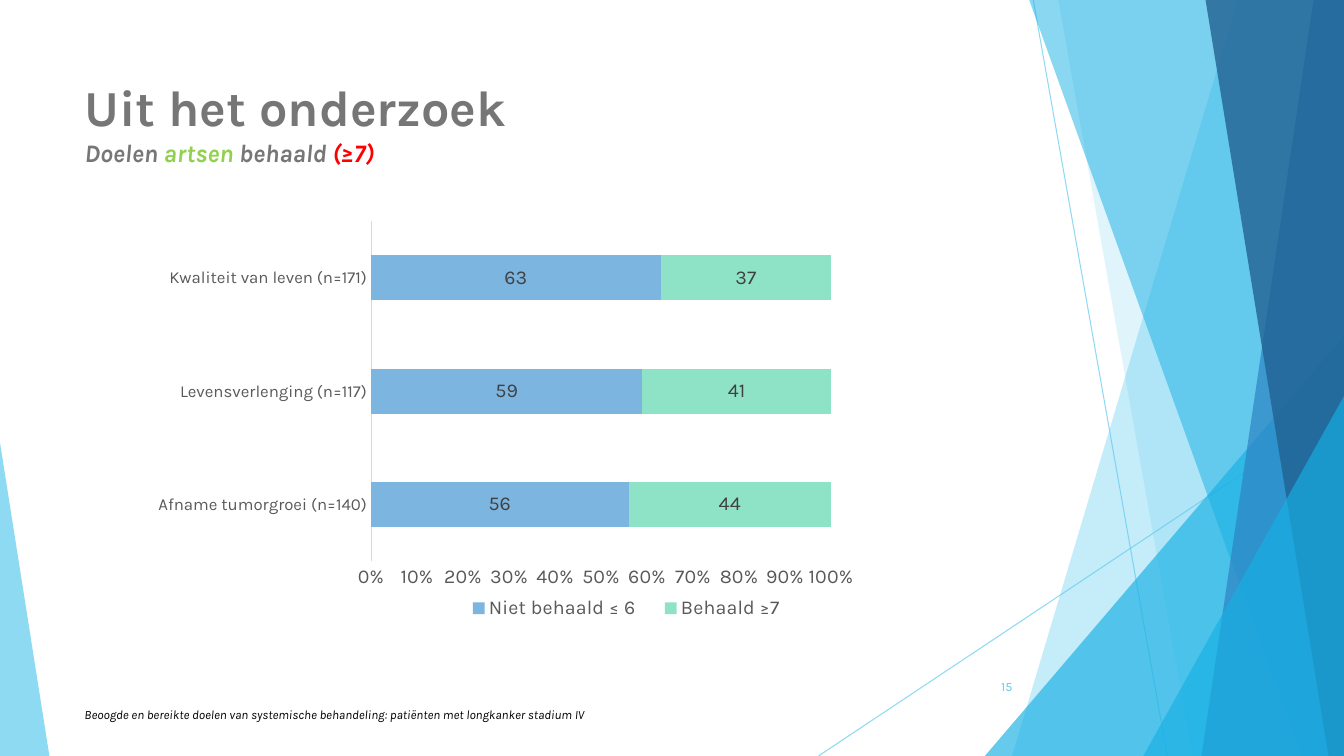
"""Build the slide on treatment goals reached by physicians."""
import lxml.etree
import pptx
import pptx.chart.data
import pptx.dml.color
import pptx.enum.chart
import pptx.enum.shapes
import pptx.enum.text
import pptx.oxml
import pptx.oxml.ns
import pptx.util

WIDTH, HEIGHT = pptx.util.Inches(13.333), pptx.util.Inches(7.5)
FONT = "Karla"
COLORS = {
    "sky": "5FCBEF", "cyan": "17B0E4", "blue": "2E83C3", "navy": "226292",
    "title": "767676", "lime": "92D050", "red": "FF0000", "black": "000000",
    "missed": "7CB5E0", "reached": "8EE3C7", "axis": "595959",
    "rule": "D9D9D9", "value": "404040",
}
TRIANGLE = pptx.enum.shapes.MSO_SHAPE.ISOSCELES_TRIANGLE
TOP = pptx.enum.text.MSO_ANCHOR.TOP
MIDDLE = pptx.enum.text.MSO_ANCHOR.MIDDLE
LEFT = pptx.enum.text.PP_ALIGN.LEFT
RIGHT = pptx.enum.text.PP_ALIGN.RIGHT


def across(percent):
    return round(WIDTH * percent / 100)


def down(percent):
    return round(HEIGHT * percent / 100)


def area(left, top, width, height):
    return across(left), down(top), across(width), down(height)


def rgb(name):
    return pptx.dml.color.RGBColor.from_string(COLORS[name])


def paint(fill_or_line, color, opacity):
    fill_or_line.solid()
    fill_or_line.fore_color.rgb = rgb(color)
    tint = fill_or_line.fore_color._xFill[0]
    alpha = lxml.etree.SubElement(tint, pptx.oxml.ns.qn("a:alpha"))
    alpha.set("val", str(opacity * 1000))


def finish_facet(facet, color, opacity):
    facet.shadow.inherit = False
    facet.line.fill.background()
    paint(facet.fill, color, opacity)


def add_ribbon(slide, top_left, bottom_left, color, opacity):
    builder = slide.shapes.build_freeform(across(top_left), 0)
    corners = [(100, 0), (100, 100), (bottom_left, 100)]
    builder.add_line_segments([(across(x), down(y)) for x, y in corners], close=True)
    finish_facet(builder.convert_to_shape(), color, opacity)


def add_wedge(slide, left, top, width, apex, color, opacity):
    wedge = slide.shapes.add_shape(TRIANGLE, *area(left, top, width, 100 - top))
    wedge.adjustments[0] = apex
    finish_facet(wedge, color, opacity)


def add_ray(slide, start_x, start_y, end_x):
    ray = slide.shapes.add_connector(
        pptx.enum.shapes.MSO_CONNECTOR.STRAIGHT,
        across(start_x), down(start_y), across(end_x), HEIGHT)
    ray.line.width = pptx.util.Pt(0.75)
    paint(ray.line.fill, "sky", 70)
    lxml.etree.SubElement(ray._element.spPr, pptx.oxml.ns.qn("a:effectLst"))


def style_font(font, size, color, bold=False, italic=False):
    font.name, font.size = FONT, pptx.util.Pt(size)
    font.color.rgb = rgb(color)
    font.bold, font.italic = bold, italic


def add_text(slide, box, lines, anchor=MIDDLE, align=LEFT):
    frame = slide.shapes.add_textbox(*box).text_frame
    frame.word_wrap = True
    frame.vertical_anchor = anchor
    if anchor == TOP:
        frame.margin_top = down(1.2)
    paragraph = frame.paragraphs[0]
    paragraph.alignment = align
    for number, line in enumerate(lines):
        if number:
            paragraph.add_line_break()
        for words, *look in line:
            run = paragraph.add_run()
            run.text = words
            style_font(run.font, *look)


def place(parent, x, y, w, h, inner=False):
    """Fix the position of a chart part as shares of the chart."""
    parts = [("layoutTarget", "inner")] if inner else []
    parts += [("xMode", "edge"), ("yMode", "edge"), ("x", x), ("y", y), ("w", w), ("h", h)]
    body = "".join(f'<c:{tag} val="{value}"/>' for tag, value in parts)
    layout = pptx.oxml.parse_xml(
        f'<c:layout {pptx.oxml.ns.nsdecls("c")}><c:manualLayout>{body}'
        "</c:manualLayout></c:layout>")
    for old in parent.findall(pptx.oxml.ns.qn("c:layout")):
        parent.remove(old)
    position = parent.find(pptx.oxml.ns.qn("c:legendPos"))
    if position is None:
        parent.insert(0, layout)
    else:
        position.addnext(layout)


def style_axis(axis, size):
    axis.has_major_gridlines = False
    axis.major_tick_mark = pptx.enum.chart.XL_TICK_MARK.NONE
    axis.minor_tick_mark = pptx.enum.chart.XL_TICK_MARK.NONE
    style_font(axis.tick_labels.font, size, "axis")


def add_goal_chart(slide, box, goals, results):
    data = pptx.chart.data.CategoryChartData()
    data.categories = goals
    for name, values, _ in results:
        data.add_series(name, values)
    chart = slide.shapes.add_chart(
        pptx.enum.chart.XL_CHART_TYPE.BAR_STACKED_100, *box, data).chart
    style_font(chart.font, 10, "black")
    chart.has_title = False

    style_axis(chart.category_axis, 12)
    rule = chart.category_axis.format.line
    rule.color.rgb, rule.width = rgb("rule"), pptx.util.Pt(0.75)
    percentages = chart.value_axis
    style_axis(percentages, 14)
    percentages.format.line.fill.background()
    percentages.minimum_scale, percentages.major_unit = 0, 0.1
    percentages.tick_labels.number_format = "0%"
    percentages.tick_labels.number_format_is_linked = False

    bars = chart.plots[0]
    bars.gap_width, bars.overlap, bars.vary_by_categories = 150, 100, False
    for series, (_, _, color) in zip(bars.series, results):
        series.format.fill.solid()
        series.format.fill.fore_color.rgb = rgb(color)
        labels = series.data_labels
        labels.show_value = True
        labels.position = pptx.enum.chart.XL_LABEL_POSITION.CENTER
        style_font(labels.font, 14, "value")

    chart.has_legend = True
    chart.legend.position = pptx.enum.chart.XL_LEGEND_POSITION.BOTTOM
    chart.legend.include_in_layout = False
    style_font(chart.legend.font, 14, "axis")
    place(chart.legend._element, 0.43, 0.89, 0.49, 0.08)
    place(chart._chartSpace.chart.plotArea, 0.32, 0.02, 0.64, 0.8, inner=True)


def add_backdrop(slide):
    add_ray(slide, 76.88, 0, 86.85)
    add_ray(slide, 100, 53.73, 60.9)
    add_ribbon(slide, 92.1, 75.3, "sky", 36)
    add_ribbon(slide, 78.75, 88.73, "sky", 20)
    add_wedge(slide, 73.28, 44.4, 26.72, 1, "cyan", 66)
    add_ribbon(slide, 76.58, 96.83, "cyan", 50)
    add_ribbon(slide, 97.73, 89.4, "blue", 70)
    add_ribbon(slide, 89.7, 98.85, "navy", 80)
    add_wedge(slide, 85.07, 52.4, 14.93, 1, "cyan", 66)
    add_wedge(slide, 0, 58.53, 3.68, 0, "sky", 70)


def main():
    deck = pptx.Presentation()
    deck.slide_width, deck.slide_height = WIDTH, HEIGHT
    slide = deck.slides.add_slide(deck.slide_layouts[6])
    add_backdrop(slide)
    add_text(slide, area(70.43, 88.13, 5.63, 5.33), [[("15", 9, "sky")]], align=RIGHT)
    add_text(slide, area(5.55, 8.93, 70.5, 19.2), [
        [("Uit het onderzoek", 36, "title", True)],
        [("Doelen ", 18, "title", True, True), ("artsen", 18, "lime", True, True),
         (" behaald", 18, "title", True, True), (" (≥7)", 18, "red", True, True)],
    ], anchor=TOP)
    add_text(slide, area(5.55, 91.87, 51.68, 5.33), [[(
        "Beoogde en bereikte doelen van systemische behandeling: "
        "patiënten met longkanker stadium IV", 9, "black", False, True)]])
    add_goal_chart(
        slide, area(10.5, 28.13, 53.48, 56.27),
        ["Afname tumorgroei (n=140)", "Levensverlenging (n=117)",
         "Kwaliteit van leven (n=171)"],
        [("Niet behaald ≤ 6", (56, 59, 63), "missed"),
         ("Behaald ≥7", (44, 41, 37), "reached")])
    deck.save("out.pptx")


if __name__ == "__main__":
    main()
